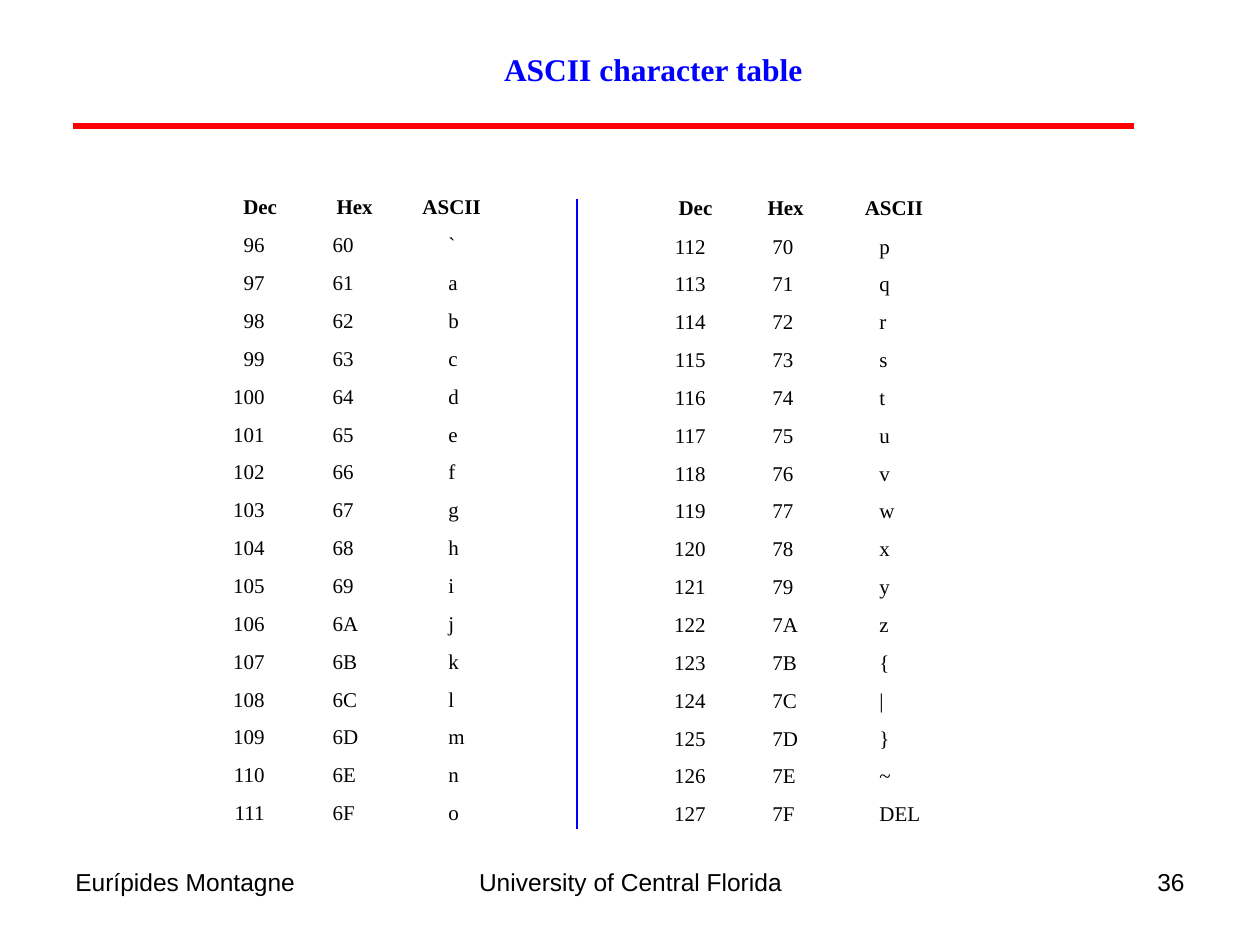
from dataclasses import dataclass

from pptx import Presentation
from pptx.dml.color import RGBColor
from pptx.enum.shapes import MSO_CONNECTOR
from pptx.enum.text import MSO_ANCHOR, MSO_AUTO_SIZE, PP_ALIGN
from pptx.oxml.ns import qn
from pptx.util import Inches, Pt
from lxml.etree import SubElement


@dataclass(frozen=True)
class Theme:
    serif: str = "Times New Roman"
    sans: str = "Arial"
    ink: str = "000000"
    blue: str = "0000FF"
    red: str = "FF0000"
    title_size: int = 18
    table_size: int = 12
    footer_size: int = 14


THEME = Theme()
LEFT, CENTER, RIGHT = PP_ALIGN.LEFT, PP_ALIGN.CENTER, PP_ALIGN.RIGHT

TITLE = "ASCII character table"
HEADINGS = ("Dec", "Hex", "ASCII")
CONTROL_NAMES = {127: "DEL"}
CODES_PER_TABLE = 16
ROW_HEIGHT = 0.3
TABLE_TOP = 1.5

# pads: right inset of Dec, then left insets of Hex and ASCII
TABLES = [
    {"first": 96, "left": 1.75, "header": 0.3,
     "widths": (0.63, 0.87, 0.67), "pads": (0.28, 0.26, 0.31)},
    {"first": 112, "left": 5.17, "header": 0.31,
     "widths": (0.7, 0.73, 0.99), "pads": (0.27, 0.26, 0.38)},
]

# text, left, width, alignment
FOOTERS = [
    ("Eurípides Montagne", 0.5, 2.33, LEFT),
    ("University of Central Florida", 3.42, 3.17, CENTER),
    ("36", 7.17, 2.33, RIGHT),
]

# start, end, colour, points
RULES = [
    ((0.58, 1), (9, 1), THEME.red, 3),
    ((4.58, 1.58), (4.58, 6.58), THEME.blue, 0.75),
]


def write(frame, text, font, size, color, align=LEFT, bold=False):
    para = frame.paragraphs[0]
    para.alignment = align
    span = para.add_run()
    span.text = text
    span.font.name = font
    span.font.size = Pt(size)
    span.font.bold = bold
    span.font.color.rgb = RGBColor.from_string(color)


def place(shape, left, top, width, height):
    shape.left, shape.top = Inches(left), Inches(top)
    shape.width, shape.height = Inches(width), Inches(height)


def add_title(page):
    title = page.shapes.title
    place(title, 4, 0.33, 2.38, 0.7)
    frame = title.text_frame
    frame.auto_size = MSO_AUTO_SIZE.NONE
    frame.word_wrap = False
    frame.vertical_anchor = MSO_ANCHOR.TOP
    frame.margin_left = frame.margin_right = 0
    frame.margin_top = Inches(0.07)
    write(frame, TITLE, THEME.serif, THEME.title_size, THEME.blue, bold=True)


def add_rule(page, start, end, color, points):
    line = page.shapes.add_connector(
        MSO_CONNECTOR.STRAIGHT, *map(Inches, start + end))
    line.line.color.rgb = RGBColor.from_string(color)
    line.line.width = Pt(points)
    SubElement(line._element.spPr, qn("a:effectLst"))


def add_footer(page, text, left, width, align):
    box = page.shapes.add_textbox(
        Inches(left), Inches(6.83), Inches(width), Inches(0.52))
    box.text_frame.word_wrap = True
    write(box.text_frame, text, THEME.sans, THEME.footer_size, THEME.ink, align)


def fill_cell(cell, text, align, pad_left, pad_right, bold):
    cell.fill.background()
    cell.vertical_anchor = MSO_ANCHOR.MIDDLE
    cell.margin_left, cell.margin_right = Inches(pad_left), Inches(pad_right)
    write(cell.text_frame, text, THEME.serif, THEME.table_size, THEME.ink,
          align, bold)


def add_code_table(page, first, left, header, widths, pads):
    codes = range(first, first + CODES_PER_TABLE)
    rows = [HEADINGS] + [
        (str(code), f"{code:X}", CONTROL_NAMES.get(code, chr(code)))
        for code in codes]
    height = header + CODES_PER_TABLE * ROW_HEIGHT
    table = page.shapes.add_table(
        len(rows), len(HEADINGS), Inches(left), Inches(TABLE_TOP),
        Inches(sum(widths)), Inches(height)).table
    table.first_row = table.horz_banding = False
    for column, width in zip(table.columns, widths):
        column.width = Inches(width)
    for r, values in enumerate(rows):
        table.rows[r].height = Inches(ROW_HEIGHT if r else header)
        for c, value in enumerate(values):
            if r == 0:
                layout = (CENTER, 0.05, 0.05)
            elif c == 0:
                layout = (RIGHT, 0.05, pads[c])
            else:
                layout = (LEFT, pads[c], 0)
            fill_cell(table.cell(r, c), value, *layout, bold=r == 0)


def main():
    deck = Presentation()
    deck.slide_width, deck.slide_height = Inches(10), Inches(7.5)
    page = deck.slides.add_slide(deck.slide_layouts.get_by_name("Title Only"))
    for footer in FOOTERS:
        add_footer(page, *footer)
    for table in TABLES:
        add_code_table(page, **table)
    add_title(page)
    for rule in RULES:
        add_rule(page, *rule)
    deck.save("out.pptx")


if __name__ == "__main__":
    main()
